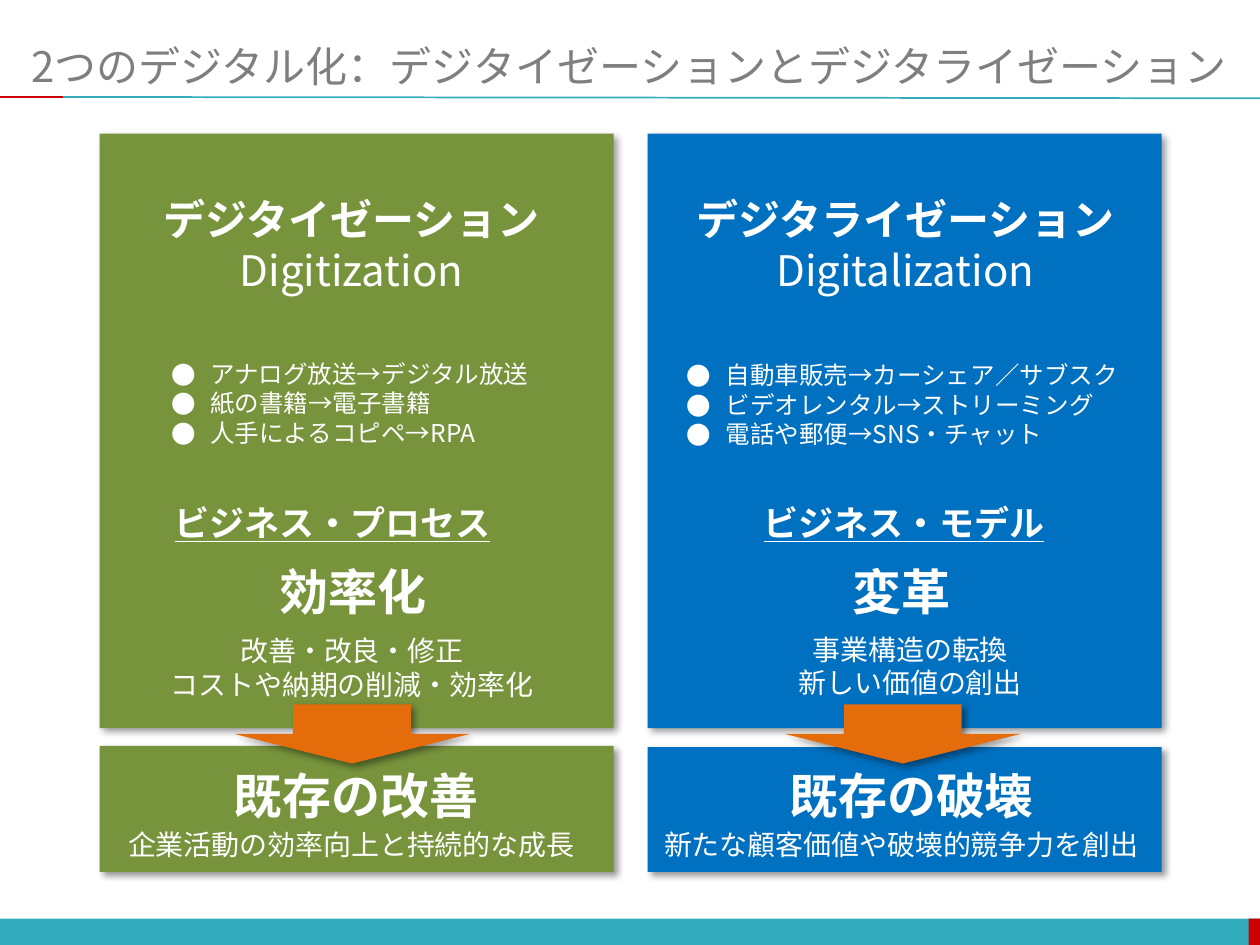
from lxml import etree
from pptx import Presentation
from pptx import util as u
from pptx.dml.color import RGBColor
from pptx.enum import shapes, text
from pptx.oxml import parse_xml
from pptx.oxml.ns import qn

FONT = "Noto Sans CJK JP"
COLORS = {"green": "77933C", "blue": "0070C0", "orange": "E46C0A", "teal": "33ACBD",
          "red": "CC0000", "gray": "7F7F7F", "white": "FFFFFF"}
COLUMNS, ROWS = 100, 75
A_NS = "http://schemas.openxmlformats.org/drawingml/2006/main"
SHADOW = (f'<a:effectLst xmlns:a="{A_NS}"><a:outerShdw blurRad="50800" dist="38100" dir="2700000" '
          'algn="tl" rotWithShape="0"><a:srgbClr val="000000"><a:alpha val="40000"/></a:srgbClr>'
          '</a:outerShdw></a:effectLst>')

PANELS = [
    {"left": 7.9, "color": "green", "arrow": 18.6, "result_row": 59.2, "texts": [
        (11.9, 14.9, 32, 9.1, ["デジタイゼーション", "Digitization"], [24, 24], [True, False]),
        (8.7, 39.3, 35.4, 4.4, ["ビジネス・プロセス"], [20], [True]),
        (21.1, 44.1, 13.8, 5.7, ["効率化"], [28], [True]),
        (12.3, 49.8, 31.3, 6.4, ["改善・改良・修正", "コストや納期の削減・効率化"], [16, 16], [False] * 2)],
     "bullets": (12.6, 28, 30.7, ["アナログ放送→デジタル放送", "紙の書籍→電子書籍", "人手によるコピペ→RPA"]),
     "result": [(17.4, 60.3, 21.7, 5.7, ["既存の改善"], [28], [True]),
                (7.5, 65.2, 40.8, 3.7, ["企業活動の効率向上と持続的な成長"], [16], [False])]},
    {"left": 51.4, "color": "blue", "arrow": 62.3, "result_row": 59.3, "texts": [
        (54, 14.9, 35.7, 9.1, ["デジタライゼーション", "Digitalization"], [24, 24], [True, False]),
        (59.5, 39.3, 24.5, 4.4, ["ビジネス・モデル"], [20], [True]),
        (66.6, 44.1, 9.9, 5.7, ["変革"], [28], [True]),
        (56.6, 49.7, 31.3, 6.4, ["事業構造の転換", "新しい価値の創出"], [16, 16], [False] * 2)],
     "bullets": (53.5, 28.1, 36.6, ["自動車販売→カーシェア／サブスク", "ビデオレンタル→ストリーミング",
                                    "電話や郵便→SNS・チャット"]),
     "result": [(61.5, 60.3, 21.7, 5.7, ["既存の破壊"], [28], [True]),
                (51.2, 65.2, 40.7, 3.7, ["新たな顧客価値や破壊的競争力を創出"], [16], [False])]},
]


def write(paragraph, content, size=16, color="white", bold=False, underline=False,
          align=text.PP_ALIGN.CENTER):
    paragraph.alignment = align
    run = paragraph.add_run()
    run.text = content
    font = run.font
    font.name, font.size, font.bold, font.underline = FONT, u.Pt(size), bold, underline
    font.color.rgb = RGBColor.from_string(COLORS[color])
    east_asian = etree.Element(qn("a:ea"), typeface=FONT)
    run._r.rPr.find(qn("a:latin")).addnext(east_asian)


def add_bullet(paragraph):
    properties = paragraph._p.get_or_add_pPr()
    properties.set("marL", str(u.Inches(0.31)))
    properties.set("indent", str(-u.Inches(0.31)))
    etree.SubElement(properties, qn("a:buFont"), typeface=FONT)
    etree.SubElement(properties, qn("a:buChar"), char="●")


class SlideBuilder:
    """Places elements on one slide by grid column and row."""

    def __init__(self, presentation):
        self.slide = presentation.slides.add_slide(presentation.slide_layouts[5])
        self.column = presentation.slide_width / COLUMNS
        self.row = presentation.slide_height / ROWS

    def box(self, left, top, width, height):
        return (round(left * self.column), round(top * self.row),
                round(width * self.column), round(height * self.row))

    def title(self, content, *place):
        title = self.slide.shapes.title
        title.left, title.top, title.width, title.height = self.box(*place)
        frame = title.text_frame
        frame.margin_left = frame.margin_right = 0
        frame.auto_size = text.MSO_AUTO_SIZE.NONE
        frame.vertical_anchor = text.MSO_ANCHOR.MIDDLE
        write(frame.paragraphs[0], content, size=24, color="gray", align=text.PP_ALIGN.LEFT)

    def shape(self, color, *place, kind=shapes.MSO_SHAPE.RECTANGLE, shadow=True):
        shape = self.slide.shapes.add_shape(kind, *self.box(*place))
        shape.fill.solid()
        shape.fill.fore_color.rgb = RGBColor.from_string(COLORS[color])
        shape.line.fill.background()
        shape.shadow.inherit = False
        if shadow:
            properties = shape._element.spPr
            properties.replace(properties.find(qn("a:effectLst")), parse_xml(SHADOW))

    def line(self, color, left, top, right, bottom):
        line = self.slide.shapes.add_connector(shapes.MSO_CONNECTOR.STRAIGHT,
                                               *self.box(left, top, right, bottom))
        line.line.color.rgb = RGBColor.from_string(COLORS[color])
        line.line.width = u.Pt(1)
        etree.SubElement(line._element.spPr, qn("a:effectLst"))

    def paragraphs(self, place, lines):
        """Yields each line with its own paragraph in a new text box."""
        frame = self.slide.shapes.add_textbox(*self.box(*place)).text_frame
        frame.word_wrap = True
        for index, line in enumerate(lines):
            yield (frame.add_paragraph() if index else frame.paragraphs[0]), line

    def text(self, left, top, width, height, lines, sizes, bolds):
        rows = zip(lines, sizes, bolds)
        for paragraph, (line, size, bold) in self.paragraphs((left, top, width, height), rows):
            write(paragraph, line, size=size, bold=bold, underline=size == 20)

    def bullets(self, left, top, width, lines):
        for paragraph, line in self.paragraphs((left, top, width, 8.1), lines):
            add_bullet(paragraph)
            write(paragraph, line, size=14, align=text.PP_ALIGN.LEFT)

    def panel(self, panel):
        self.shape(panel["color"], panel["left"], 10.6, 40.8, 47.2)
        for block in panel["texts"]:
            self.text(*block)
        self.bullets(*panel["bullets"])
        top = panel["result_row"]
        self.shape(panel["color"], panel["left"], top, 40.8, 69.2 - top)
        for block in panel["result"]:
            self.text(*block)
        self.shape("orange", panel["arrow"], 55.9, 18.7, 4.7, kind=shapes.MSO_SHAPE.DOWN_ARROW)


def main():
    presentation = Presentation()
    presentation.slide_width, presentation.slide_height = u.Inches(10), u.Inches(7.5)
    builder = SlideBuilder(presentation)
    builder.shape("teal", 0, 72.9, 100, 2.1, shadow=False)
    builder.shape("red", 99.1, 72.9, 0.9, 2.1, shadow=False)
    builder.line("teal", 5, 7.7, 100, 7.8)
    builder.line("red", 0, 7.7, 5, 7.7)
    builder.title("2つのデジタル化：デジタイゼーションとデジタライゼーション", 2.5, 2.9, 97.5, 4.6)
    for panel in PANELS:
        builder.panel(panel)
    presentation.save("out.pptx")


if __name__ == "__main__":
    main()
